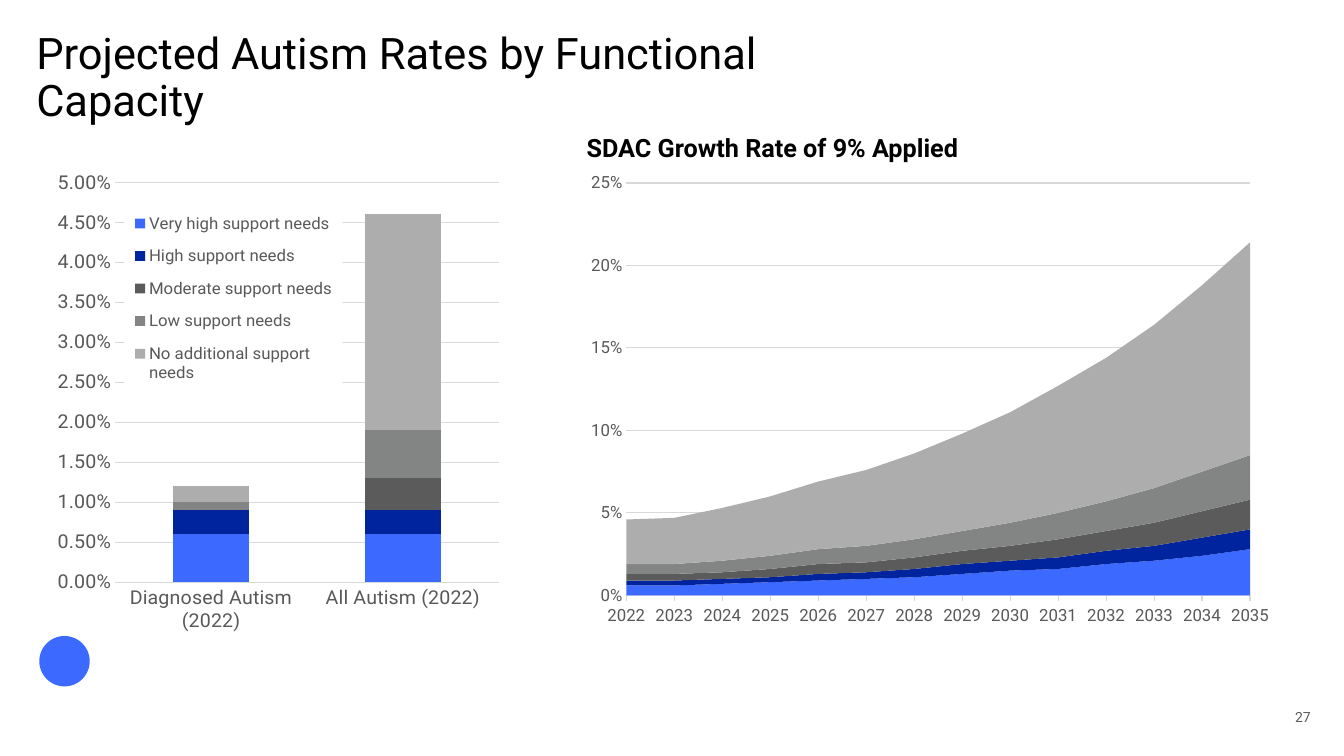
from lxml import etree
from pptx import Presentation
from pptx import util as u
from pptx.chart.data import CategoryChartData
from pptx.dml.color import RGBColor
from pptx.enum import chart as ch, shapes, text
from pptx.oxml import parse_xml
from pptx.oxml.ns import nsdecls, qn

BLUE = RGBColor(0x3C, 0x69, 0xFF)
NAVY = RGBColor(0x00, 0x24, 0x9E)
DARK = RGBColor(0x5B, 0x5B, 0x5B)
MID = RGBColor(0x83, 0x84, 0x84)
LIGHT = RGBColor(0xAD, 0xAD, 0xAD)
BLACK = RGBColor(0, 0, 0)
LABEL = RGBColor(0x59, 0x59, 0x59)
GRID = RGBColor(0xD9, 0xD9, 0xD9)
LEVELS = (BLUE, NAVY, DARK, MID, LIGHT)

NEEDS = {
    "Very high support needs": (0.006, 0.006),
    "High support needs": (0.003, 0.003),
    "Moderate support needs": (0, 0.004),
    "Low support needs": (0.001, 0.006),
    "No additional support needs": (0.002, 0.027),
}
GROWTH = (
    (0.006, 0.006, 0.007, 0.008, 0.009, 0.01, 0.011,
     0.013, 0.015, 0.016, 0.019, 0.021, 0.024, 0.028),
    (0.003, 0.003, 0.003, 0.003, 0.004, 0.004, 0.005,
     0.006, 0.006, 0.007, 0.008, 0.009, 0.011, 0.012),
    (0.004, 0.004, 0.004, 0.005, 0.006, 0.006, 0.007,
     0.008, 0.009, 0.011, 0.012, 0.014, 0.016, 0.018),
    (0.006, 0.006, 0.007, 0.008, 0.009, 0.01, 0.011,
     0.012, 0.014, 0.016, 0.018, 0.021, 0.024, 0.027),
    (0.027, 0.028, 0.032, 0.036, 0.041, 0.046, 0.052,
     0.059, 0.067, 0.077, 0.087, 0.099, 0.113, 0.129),
)


def layout(area):
    """Manual chart layout from x, y, w, h as fractions of the chart."""
    node = parse_xml(f"<c:layout {nsdecls('c')}><c:manualLayout/></c:layout>")
    tags = [("xMode", "edge"), ("yMode", "edge"), *zip("xywh", area)]
    for tag, val in tags:
        etree.SubElement(node[0], qn(f"c:{tag}")).set("val", str(val))
    return node


def drop(parent, tag):
    for node in parent.findall(qn(tag)):
        parent.remove(node)


class Deck:
    face = "Roboto"

    def __init__(self, slide):
        self.slide = slide

    def style(self, font, size, color, bold=False):
        font.name, font.size, font.bold = self.face, u.Pt(size), bold
        font.color.rgb = color

    def label(self, box, words, size, color=BLACK, bold=False, pad=(0, 0),
              align=text.PP_ALIGN.LEFT, anchor=text.MSO_ANCHOR.TOP, space=1.0):
        frame = self.slide.shapes.add_textbox(*map(u.Inches, box)).text_frame
        frame.word_wrap = True
        frame.vertical_anchor = anchor
        frame.margin_left = frame.margin_right = u.Inches(pad[0])
        frame.margin_top = frame.margin_bottom = u.Inches(pad[1])
        frame.text = words
        para = frame.paragraphs[0]
        para.alignment, para.line_spacing = align, space
        self.style(para.runs[0].font, size, color, bold)

    def mark(self, box, color):
        dot = self.slide.shapes.add_shape(
            shapes.MSO_SHAPE.OVAL, *map(u.Inches, box))
        dot.shadow.inherit = False
        dot.fill.solid()
        dot.fill.fore_color.rgb = color
        dot.line.fill.background()

    def chart(self, box, kind, cats, rows, size, top, step, form, area):
        data = CategoryChartData(number_format=form)
        data.categories = cats
        for name, vals in rows:
            data.add_series(name, vals)
        chart = self.slide.shapes.add_chart(
            kind, *map(u.Inches, box), data).chart
        chart.has_title = chart.has_legend = False
        self.style(chart.font, size, BLACK)
        for row, color in zip(chart.plots[0].series, LEVELS):
            row.format.fill.solid()
            row.format.fill.fore_color.rgb = color

        # Axes
        cat, val = chart.category_axis, chart.value_axis
        for axis in (cat, val):
            self.style(axis.tick_labels.font, size, LABEL)
            axis.major_tick_mark = axis.minor_tick_mark = ch.XL_TICK_MARK.NONE
        val.minimum_scale, val.maximum_scale = 0, top
        val.major_unit = step
        val.tick_labels.number_format = form
        val.tick_labels.number_format_is_linked = False
        val.format.line.fill.background()
        cat.has_major_gridlines, val.has_major_gridlines = False, True
        for line in (cat.format.line, val.major_gridlines.format.line):
            line.color.rgb, line.width = GRID, u.Pt(0.75)

        # Plot position
        plot = chart.plots[0]._element.getparent()
        drop(plot, "c:layout")
        node = layout(area)
        target = etree.Element(qn("c:layoutTarget"))
        target.set("val", "inner")
        node[0].insert(0, target)
        plot.insert(0, node)
        return chart

    def legend(self, chart, size, area):
        chart.has_legend = True
        key = chart.legend
        key.position = ch.XL_LEGEND_POSITION.BOTTOM
        key.include_in_layout = True
        self.style(key.font, size, LABEL)
        root = key._element
        drop(root, "c:layout")
        root.find(qn("c:legendPos")).addnext(layout(area))
        root.find(qn("c:overlay")).addnext(parse_xml(
            f"<c:spPr {nsdecls('c', 'a')}><a:solidFill>"
            '<a:srgbClr val="FFFFFF"/></a:solidFill></c:spPr>'))


def main():
    prs = Presentation()
    prs.slide_width, prs.slide_height = u.Inches(13.33), u.Inches(7.5)
    deck = Deck(prs.slides.add_slide(prs.slide_layouts[6]))

    # Title, corner mark and page number
    deck.mark((0.39, 6.31, 0.5, 0.5), BLUE)
    deck.label((0.36, 0.32, 8.48, 1.35),
               "Projected Autism Rates by Functional Capacity", 31, space=0.9)
    deck.label((12.54, 7, 0.46, 0.2), "27", 10, DARK,
               align=text.PP_ALIGN.RIGHT, anchor=text.MSO_ANCHOR.BOTTOM)

    # Rates in 2022
    rates = deck.chart(
        (0.39, 1.63, 4.7, 4.65), ch.XL_CHART_TYPE.COLUMN_STACKED,
        ("Diagnosed Autism (2022)", "All Autism (2022)"), NEEDS.items(),
        14, 0.05, 0.005, "0.00%", (0.16, 0.04, 0.81, 0.88))
    bars = rates.plots[0]
    bars.gap_width, bars.overlap, bars.vary_by_categories = 150, 100, False
    deck.legend(rates, 12, (0.18, 0.08, 0.46, 0.43))

    # Projection to 2035
    years = [str(year) for year in range(2022, 2036)]
    trend = deck.chart(
        (5.72, 1.63, 7.03, 4.65), ch.XL_CHART_TYPE.AREA_STACKED,
        years, zip(NEEDS, GROWTH),
        12, 0.25, 0.05, "0%", (0.07, 0.04, 0.88, 0.88))
    trend.plots[0].vary_by_categories = False
    trend.category_axis.major_tick_mark = ch.XL_TICK_MARK.OUTSIDE
    cross = trend.value_axis._element.find(qn("c:crossBetween"))
    cross.set("val", "midCat")
    deck.label((5.72, 1.26, 5.97, 0.4), "SDAC Growth Rate of 9% Applied",
               18, bold=True, pad=(0.1, 0.05))

    prs.save("out.pptx")


if __name__ == "__main__":
    main()
